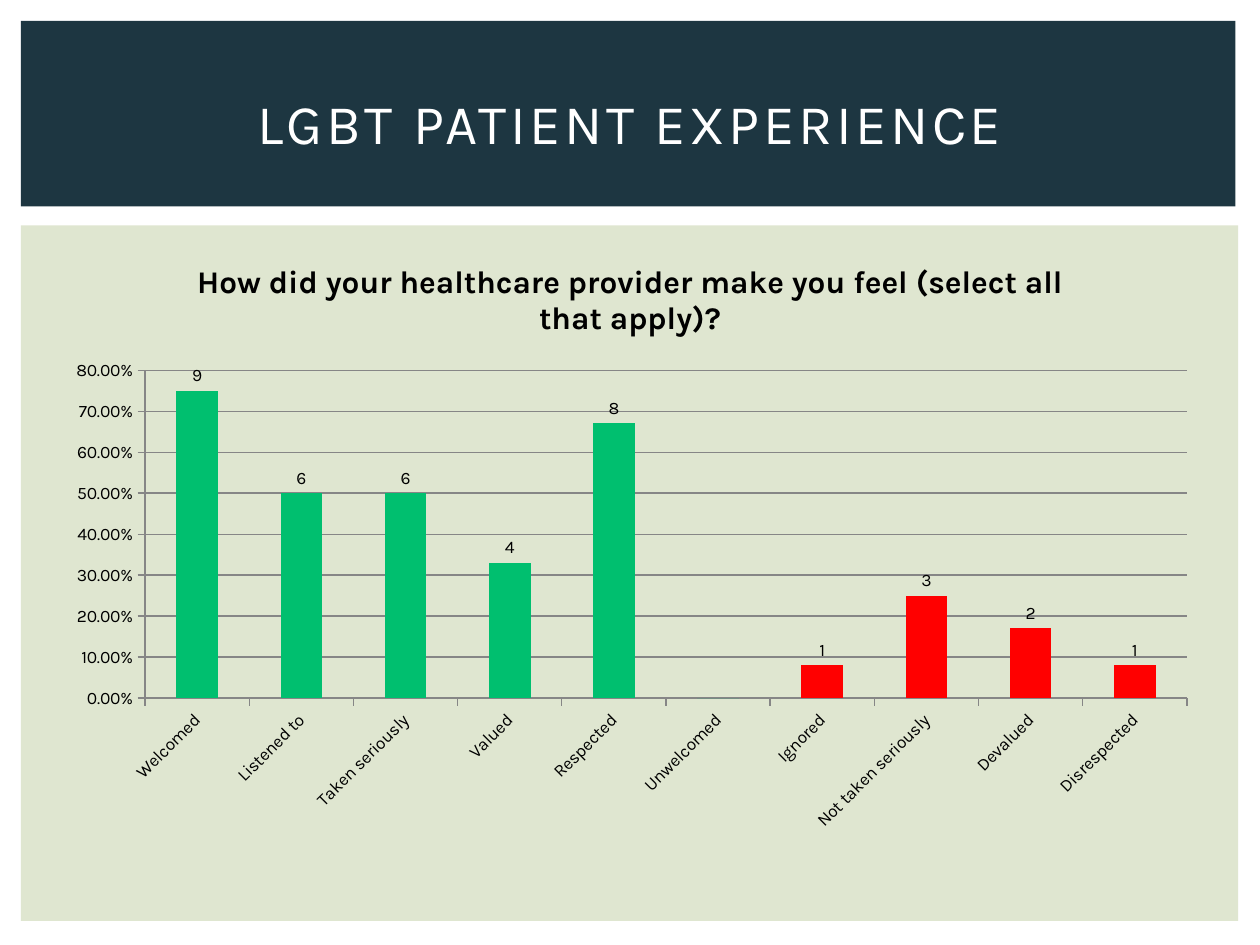
from lxml import etree
from pptx import Presentation
from pptx.chart.data import CategoryChartData
from pptx.dml.color import RGBColor
from pptx.enum.chart import XL_CHART_TYPE, XL_LABEL_POSITION, XL_TICK_MARK
from pptx.enum.shapes import MSO_SHAPE
from pptx.enum.text import MSO_ANCHOR, PP_ALIGN
from pptx.oxml.ns import qn
from pptx.util import Pt

COLUMN = XL_CHART_TYPE.COLUMN_CLUSTERED
OUTSIDE_END = XL_LABEL_POSITION.OUTSIDE_END
TICK_OUT, TICK_NONE = XL_TICK_MARK.OUTSIDE, XL_TICK_MARK.NONE
RECTANGLE = MSO_SHAPE.RECTANGLE
MIDDLE = MSO_ANCHOR.MIDDLE
CENTER = PP_ALIGN.CENTER

FONT = "Karla"
COLORS = {"banner": "1D3641", "panel": "DFE6D0", "white": "FFFFFF", "text": "000000",
          "axis": "868686", "positive": "00BF6F", "negative": "FF0000"}

# Feeling, share of respondents, number of respondents, bar colour
RESPONSES = [
    ("Welcomed", 0.75, 9, "positive"),
    ("Listened to", 0.5, 6, "positive"),
    ("Taken seriously", 0.5, 6, "positive"),
    ("Valued", 0.33, 4, "positive"),
    ("Respected", 0.67, 8, "positive"),
    ("Unwelcomed", 0, None, "positive"),
    ("Ignored", 0.08, 1, "negative"),
    ("Not taken seriously", 0.25, 3, "negative"),
    ("Devalued", 0.17, 2, "negative"),
    ("Disrespected", 0.08, 1, "negative"),
]


def color(name):
    return RGBColor.from_string(COLORS[name])


def style_font(font, size, color_name, bold=False):
    font.name = FONT
    font.size = Pt(size)
    font.bold = bold
    font.color.rgb = color(color_name)


def add_block(slide, left, top, width, height, color_name):
    shape = slide.shapes.add_shape(RECTANGLE, Pt(left), Pt(top), Pt(width), Pt(height))
    shape.shadow.inherit = False
    shape.fill.solid()
    shape.fill.fore_color.rgb = color(color_name)
    shape.line.fill.background()


def add_banner(slide, left, top, width, height):
    add_block(slide, left, top, width, height, "banner")
    text_box = slide.shapes.add_textbox(Pt(left + 18), Pt(top + 16), Pt(width - 34), Pt(height - 23))
    text_frame = text_box.text_frame
    text_frame.word_wrap = True
    text_frame.vertical_anchor = MIDDLE
    text_frame.text = "LGBT PATIENT EXPERIENCE"
    paragraph = text_frame.paragraphs[0]
    paragraph.alignment = CENTER
    run = paragraph.runs[0]
    style_font(run.font, 32, "white")
    run.font._element.set("spc", "200")  # letter spacing of 2 pt


def set_layout(parent, position, **fractions):
    """Place a chart part by fractions of the chart's size."""
    for previous in parent.findall(qn("c:layout")):
        parent.remove(previous)
    layout = etree.Element(qn("c:layout"))
    manual = etree.SubElement(layout, qn("c:manualLayout"))
    if "w" in fractions:
        etree.SubElement(manual, qn("c:layoutTarget")).set("val", "inner")
    for axis in ("x", "y"):
        etree.SubElement(manual, qn(f"c:{axis}Mode")).set("val", "edge")
    for name, value in fractions.items():
        etree.SubElement(manual, qn(f"c:{name}")).set("val", str(value))
    parent.insert(position, layout)


def style_line(line):
    line.color.rgb = color("axis")
    line.width = Pt(0.75)


def style_chart_title(chart):
    text_frame = chart.chart_title.text_frame
    text_frame.text = "How did your healthcare provider make you feel (select all that apply)?"
    style_font(text_frame.paragraphs[0].runs[0].font, 18, "text", bold=True)
    set_layout(chart.chart_title._element, 1, x=0.12, y=0.03)


def style_axes(chart):
    for axis in (chart.category_axis, chart.value_axis):
        axis.major_tick_mark = TICK_OUT
        axis.minor_tick_mark = TICK_NONE
        style_line(axis.format.line)
        style_font(axis.tick_labels.font, 10, "text")
    chart.category_axis.has_major_gridlines = False
    label_body = chart.category_axis._element.find(qn("c:txPr")).find(qn("a:bodyPr"))
    label_body.set("rot", "-2700000")  # 45 degrees upwards

    value_axis = chart.value_axis
    value_axis.minimum_scale, value_axis.maximum_scale = 0, 0.8
    value_axis.major_unit = 0.1
    value_axis.has_major_gridlines = True
    style_line(value_axis.major_gridlines.format.line)
    value_axis.tick_labels.number_format = "0.00%"
    value_axis.tick_labels.number_format_is_linked = False


def style_bars(plot):
    plot.gap_width = 150
    plot.vary_by_categories = False
    series = plot.series[0]
    series.invert_if_negative = False
    series.format.fill.solid()
    series.format.fill.fore_color.rgb = color("positive")
    for index, (_, _, count, color_name) in enumerate(RESPONSES):
        point = series.points[index]
        if color_name == "negative":
            point.format.fill.solid()
            point.format.fill.fore_color.rgb = color(color_name)
        if count is not None:
            label = point.data_label
            label.text_frame.text = str(count)
            style_font(label.text_frame.paragraphs[0].runs[0].font, 10, "text")
            label.position = OUTSIDE_END


def add_feelings_chart(slide, left, top, width, height):
    data = CategoryChartData(number_format="0.00%")
    data.categories = [response[0] for response in RESPONSES]
    data.add_series("Series 1", [response[1] for response in RESPONSES])
    frame = slide.shapes.add_chart(COLUMN, Pt(left), Pt(top), Pt(width), Pt(height), data)
    chart = frame.chart
    chart.has_legend = False
    style_font(chart.font, 10, "text")
    style_chart_title(chart)
    style_axes(chart)
    style_bars(chart.plots[0])
    plot_area = chart._chartSpace.chart.plotArea
    set_layout(plot_area, 0, x=0.08, y=0.22, w=0.9, h=0.54)


def add_chart_panel(slide, left, top, width, height):
    add_block(slide, left, top, width, height, "panel")
    add_feelings_chart(slide, left + 18, top + 6.5, width - 34, height - 50.5)


def main():
    presentation = Presentation()
    presentation.slide_width, presentation.slide_height = Pt(720), Pt(540)
    slide = presentation.slides.add_slide(presentation.slide_layouts[6])
    add_chart_panel(slide, 12, 128.75, 695.5, 397.5)
    add_banner(slide, 12, 12, 694, 106)
    presentation.save("out.pptx")


if __name__ == "__main__":
    main()
